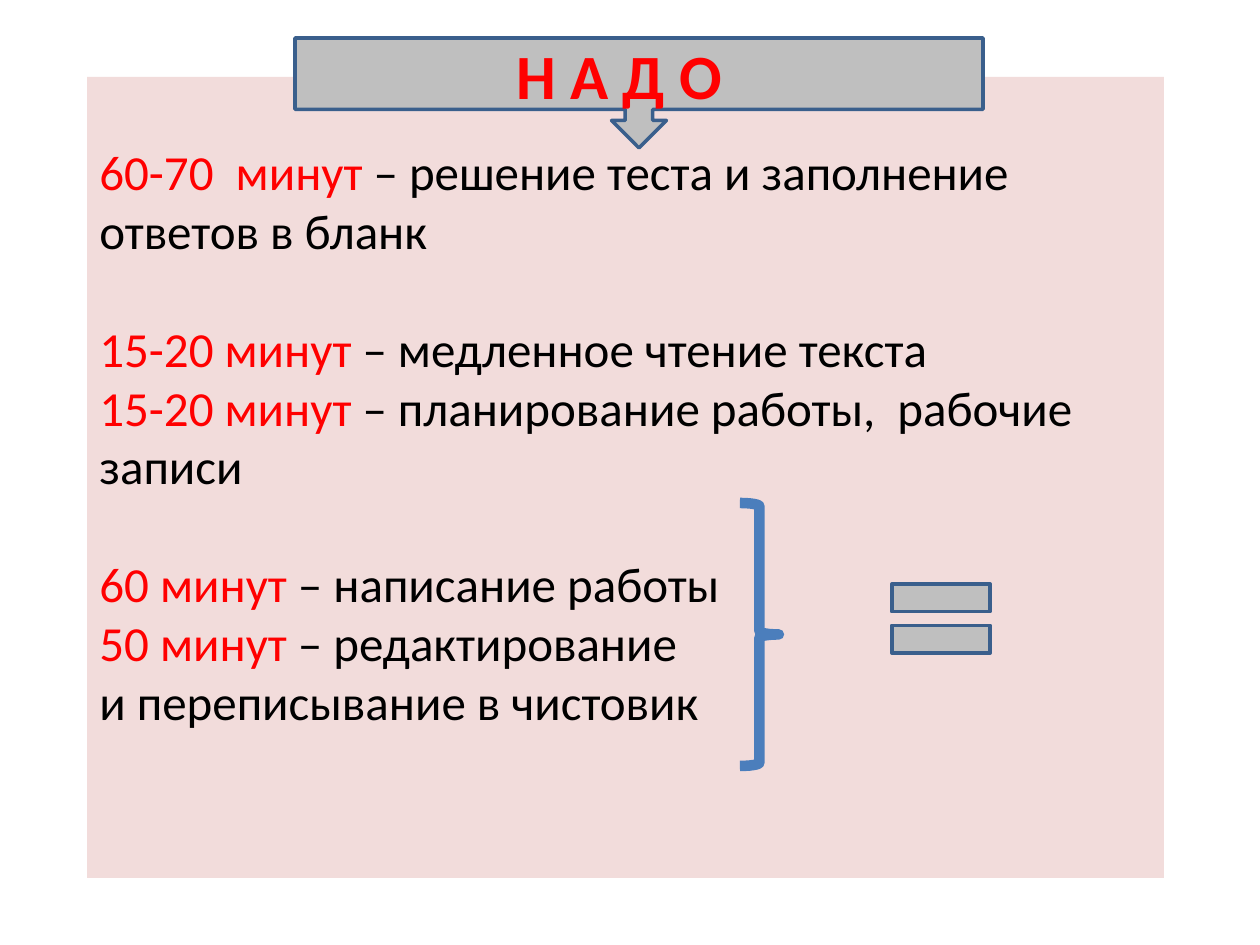
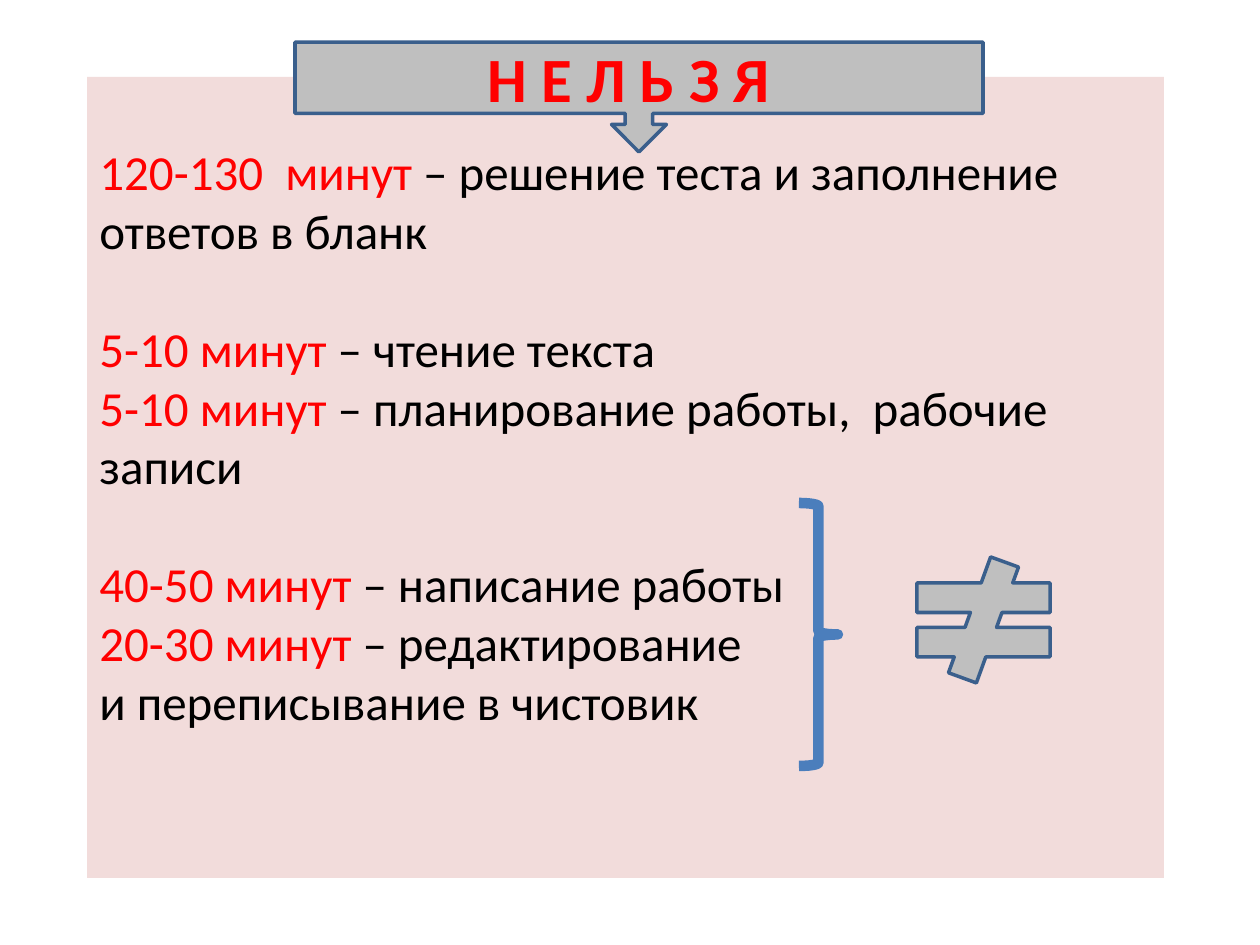
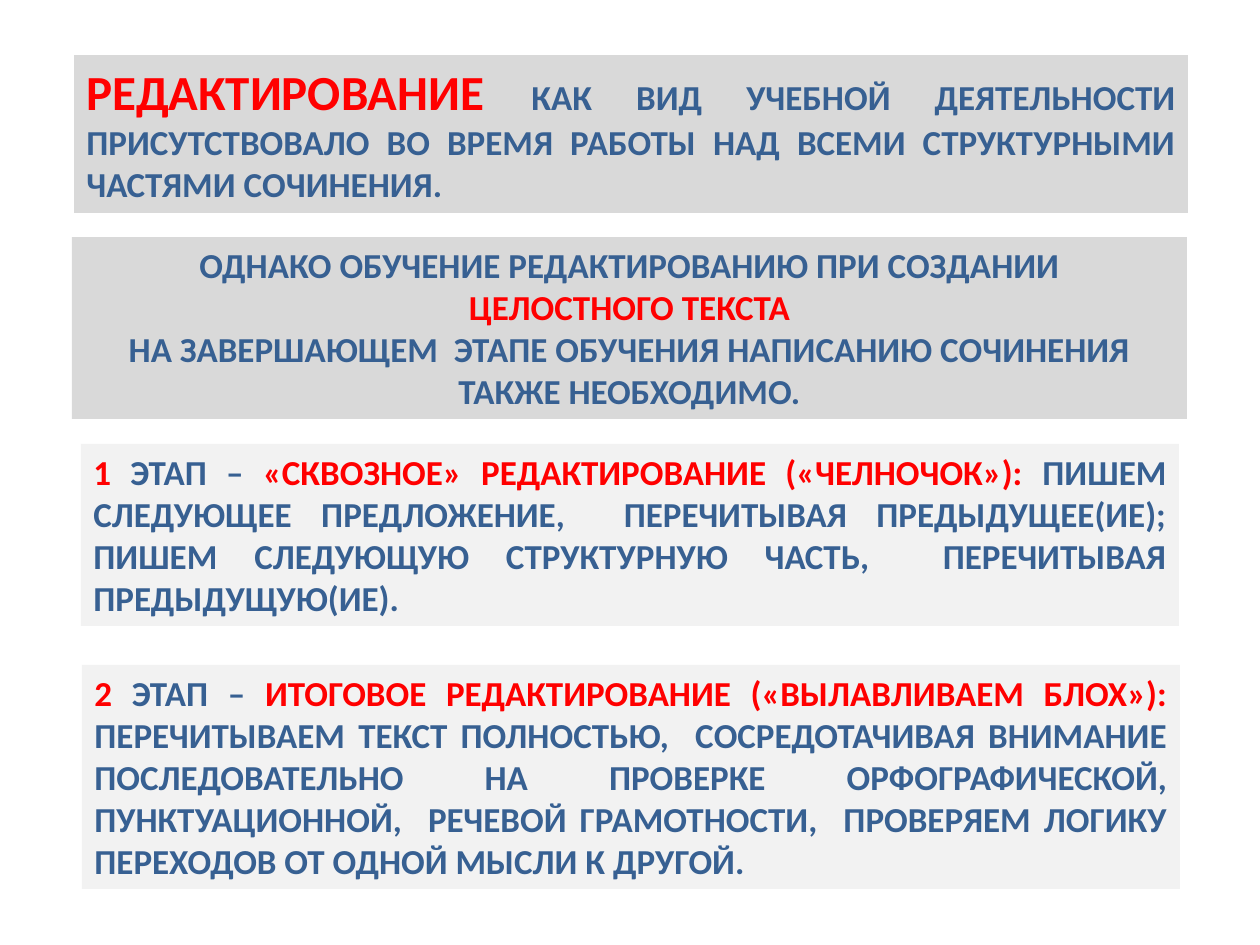
"""Build three slides on timing and editing an exam essay."""
from pptx import Presentation
from pptx.dml.color import RGBColor
from pptx.enum.shapes import MSO_SHAPE
from pptx.enum.text import MSO_ANCHOR, PP_ALIGN
from pptx.util import Emu, Pt

PIXEL = 914400 / 126
FONT = "Calibri"
RED = RGBColor(0xFF, 0x00, 0x00)
BLACK = RGBColor(0x00, 0x00, 0x00)
BLUE = RGBColor(0x37, 0x60, 0x92)
PINK = RGBColor(0xF2, 0xDC, 0xDB)
GRAY = RGBColor(0xBF, 0xBF, 0xBF)
MIDDLE_GRAY = RGBColor(0xD9, 0xD9, 0xD9)
LIGHT_GRAY = RGBColor(0xF2, 0xF2, 0xF2)
OUTLINE = RGBColor(0x3A, 0x5F, 0x8C)
BRACE_BLUE = RGBColor(0x4B, 0x7E, 0xBC)

PANEL = (87, 77, 1077, 801)
PANEL_TOP_INSET = 65
BLANK_LINE = 33.5
BANNER_LEFT, BANNER_WIDTH, BANNER_HEIGHT = 295, 688, 110
BRACE_TOP, BRACE_WIDTH, BRACE_HEIGHT = 503, 39, 263

STEPS = [
    ("решение теста и заполнение ответов в бланк", False),
    ("чтение текста", True),
    ("планирование работы,  рабочие записи", False),
    ("написание работы", True),
    ("редактирование", False),
]
LAST_LINE = "и переписывание в чистовик"

TIMINGS = [
    {
        "title": "Н А Д О",
        "title_box": (504, 30, 275, 89),
        "banner_top": 38,
        "durations": ["60-70  минут", "15-20 минут", "15-20 минут", "60 минут", "50 минут"],
        "reading": "медленное ",
        "brace_left": 740,
        "sign": (MSO_SHAPE.MATH_EQUAL, (874, 560, 134, 117)),
    },
    {
        "title": "Н Е Л Ь З Я",
        "title_box": (475, 33, 329, 89),
        "banner_top": 42,
        "durations": ["120-130  минут", "5-10 минут", "5-10 минут", "40-50 минут", "20-30 минут"],
        "reading": "",
        "brace_left": 799,
        "sign": (MSO_SHAPE.MATH_NOT_EQUAL, (893, 557, 181, 126)),
    },
]

EDITING = [
    ((74, 55, 1114, 158), MIDDLE_GRAY, PP_ALIGN.JUSTIFY, [[
        ("РЕДАКТИРОВАНИЕ ", RED, 28),
        ("КАК ВИД УЧЕБНОЙ ДЕЯТЕЛЬНОСТИ ПРИСУТСТВОВАЛО ВО ВРЕМЯ РАБОТЫ НАД ВСЕМИ "
         "СТРУКТУРНЫМИ ЧАСТЯМИ СОЧИНЕНИЯ.", BLUE, 20),
    ]]),
    ((72, 237, 1115, 182), MIDDLE_GRAY, PP_ALIGN.CENTER, [
        [("ОДНАКО ОБУЧЕНИЕ РЕДАКТИРОВАНИЮ ПРИ СОЗДАНИИ", BLUE, 20)],
        [("ЦЕЛОСТНОГО ТЕКСТА", RED, 20)],
        [("НА ЗАВЕРШАЮЩЕМ  ЭТАПЕ ОБУЧЕНИЯ НАПИСАНИЮ СОЧИНЕНИЯ ТАКЖЕ НЕОБХОДИМО.", BLUE, 20)],
    ]),
    ((81, 444, 1098, 182), LIGHT_GRAY, PP_ALIGN.JUSTIFY, [[
        ("1 ", RED, 20),
        ("ЭТАП –", BLUE, 20),
        (" «СКВОЗНОЕ» РЕДАКТИРОВАНИЕ («ЧЕЛНОЧОК»): ", RED, 20),
        ("ПИШЕМ СЛЕДУЮЩЕЕ ПРЕДЛОЖЕНИЕ,  ПЕРЕЧИТЫВАЯ ПРЕДЫДУЩЕЕ(ИЕ); ПИШЕМ СЛЕДУЮЩУЮ "
         "СТРУКТУРНУЮ ЧАСТЬ,  ПЕРЕЧИТЫВАЯ ПРЕДЫДУЩУЮ(ИЕ).", BLUE, 20),
    ]]),
    ((82, 665, 1098, 224), LIGHT_GRAY, PP_ALIGN.JUSTIFY, [[
        ("2 ", RED, 20),
        ("ЭТАП –", BLUE, 20),
        (" ИТОГОВОЕ РЕДАКТИРОВАНИЕ («ВЫЛАВЛИВАЕМ БЛОХ»): ", RED, 20),
        ("ПЕРЕЧИТЫВАЕМ ТЕКСТ ПОЛНОСТЬЮ,  СОСРЕДОТАЧИВАЯ ВНИМАНИЕ ПОСЛЕДОВАТЕЛЬНО НА ПРОВЕРКЕ "
         "ОРФОГРАФИЧЕСКОЙ, ПУНКТУАЦИОННОЙ,  РЕЧЕВОЙ ГРАМОТНОСТИ,  ПРОВЕРЯЕМ ЛОГИКУ ПЕРЕХОДОВ "
         "ОТ ОДНОЙ МЫСЛИ К ДРУГОЙ.", BLUE, 20),
    ]]),
]


def scale(pixels):
    return Emu(round(pixels * PIXEL))


def add_shape(slide, kind, box, fill=None, line=None, line_width=2):
    shape = slide.shapes.add_shape(kind, *map(scale, box))
    shape.shadow.inherit = False
    if fill is None:
        shape.fill.background()
    else:
        shape.fill.solid()
        shape.fill.fore_color.rgb = fill
    if line is None:
        shape.line.fill.background()
    else:
        shape.line.color.rgb = line
        shape.line.width = Pt(line_width)
    return shape


def write(shape, paragraphs, bold=False, alignment=PP_ALIGN.LEFT):
    frame = shape.text_frame
    frame.word_wrap = True
    frame.vertical_anchor = MSO_ANCHOR.TOP
    for index, runs in enumerate(paragraphs):
        paragraph = frame.paragraphs[0] if index == 0 else frame.add_paragraph()
        paragraph.alignment = alignment
        for text, color, size in runs:
            run = paragraph.add_run()
            run.text = text
            run.font.name = FONT
            run.font.size = Pt(size)
            run.font.bold = bold
            run.font.color.rgb = color
    return frame


def add_timing_slide(slide, timing):
    panel = add_shape(slide, MSO_SHAPE.RECTANGLE, PANEL, PINK)
    lines = []
    for index, (duration, (step, _)) in enumerate(zip(timing["durations"], STEPS)):
        detail = timing["reading"] + step if index == 1 else step
        lines.append([(duration + " ", RED, 28), ("– " + detail, BLACK, 28)])
    lines.append([(LAST_LINE, BLACK, 28)])
    frame = write(panel, lines)
    frame.margin_top = scale(PANEL_TOP_INSET)
    for paragraph, (_, starts_group) in zip(frame.paragraphs, STEPS):
        if starts_group:
            paragraph.space_before = Pt(BLANK_LINE)

    brace_box = (timing["brace_left"], BRACE_TOP, BRACE_WIDTH, BRACE_HEIGHT)
    add_shape(slide, MSO_SHAPE.RIGHT_BRACE, brace_box, line=BRACE_BLUE, line_width=6)
    sign, sign_box = timing["sign"]
    add_shape(slide, sign, sign_box, GRAY, OUTLINE)
    banner_box = (BANNER_LEFT, timing["banner_top"], BANNER_WIDTH, BANNER_HEIGHT)
    add_shape(slide, MSO_SHAPE.DOWN_ARROW_CALLOUT, banner_box, GRAY, OUTLINE)
    title = slide.shapes.add_textbox(*map(scale, timing["title_box"]))
    write(title, [[(timing["title"], RED, 36)]], bold=True)


def add_editing_slide(slide):
    for box, fill, alignment, paragraphs in EDITING:
        block = add_shape(slide, MSO_SHAPE.RECTANGLE, box, fill)
        write(block, paragraphs, bold=True, alignment=alignment)


def main():
    presentation = Presentation()
    presentation.slide_width = scale(1260)
    presentation.slide_height = scale(945)
    blank = presentation.slide_layouts[6]
    for timing in TIMINGS:
        add_timing_slide(presentation.slides.add_slide(blank), timing)
    add_editing_slide(presentation.slides.add_slide(blank))
    presentation.save("out.pptx")


if __name__ == "__main__":
    main()
